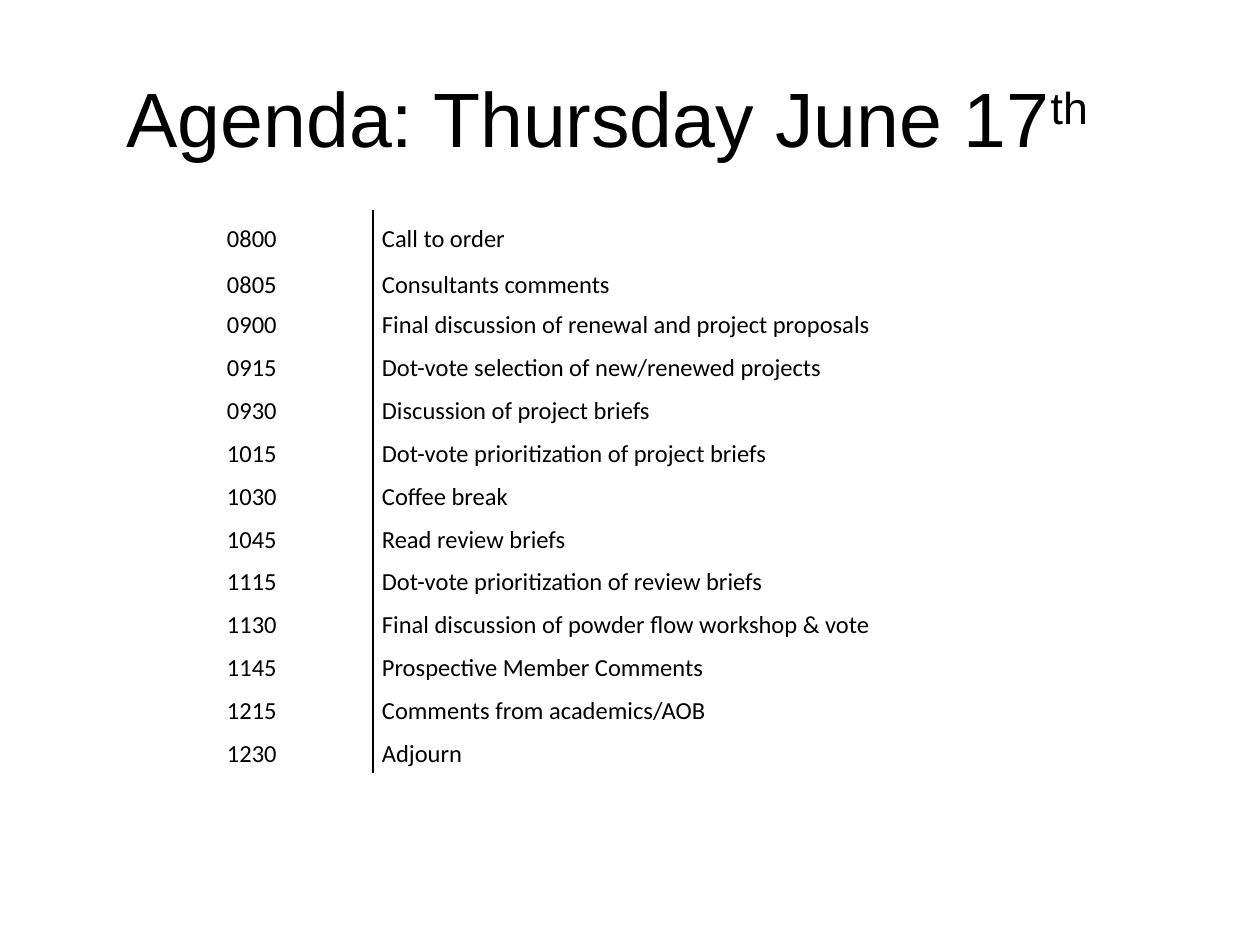
from typing import NamedTuple

from lxml.etree import SubElement
from pptx import Presentation
from pptx.dml.color import RGBColor
from pptx.enum.text import MSO_ANCHOR as Anchor, PP_ALIGN as Align
from pptx.oxml import parse_xml
from pptx.oxml.ns import nsdecls, qn
from pptx.util import Emu, Pt

BLACK = RGBColor(0x00, 0x00, 0x00)
WHITE = RGBColor(0xFF, 0xFF, 0xFF)
PX_PER_INCH = 126
NO_STYLE_NO_GRID = "{2D5ABB26-0587-4C30-8999-92F81FD0307C}"


class Item(NamedTuple):
    time: str
    topic: str


class Column(NamedTuple):
    width: int
    indent: int
    border: str


AGENDA = [
    Item("0800", "Call to order"),
    Item("0805", "Consultants comments"),
    Item("0900", "Final discussion of renewal and project proposals"),
    Item("0915", "Dot-vote selection of new/renewed projects"),
    Item("0930", "Discussion of project briefs"),
    Item("1015", "Dot-vote prioritization of project briefs"),
    Item("1030", "Coffee break"),
    Item("1045", "Read review briefs"),
    Item("1115", "Dot-vote prioritization of review briefs"),
    Item("1130", "Final discussion of powder flow workshop & vote"),
    Item("1145", "Prospective Member Comments"),
    Item("1215", "Comments from academics/AOB"),
    Item("1230", "Adjourn"),
]
# The two columns share the divider between them
COLUMNS = [Column(226, 71, "a:lnR"), Column(771, 0, "a:lnL")]
TABLE_LEFT, TABLE_TOP, TABLE_HEIGHT = 147, 210, 563
FIRST_ROWS = [53, 39]


def px(length: float) -> Emu:
    return Emu(round(length * 914400 / PX_PER_INCH))


TITLE_BOX = {"left": px(63), "top": px(38), "width": px(1134), "height": px(158)}
TITLE_FRAME = {"word_wrap": True, "vertical_anchor": Anchor.MIDDLE,
               "margin_right": px(58)}
TITLE_FONT = {"name": "Arial", "size": Pt(44)}
CELL_FORMAT = {"vertical_anchor": Anchor.MIDDLE, "margin_left": px(9),
               "margin_right": px(9), "margin_top": 0, "margin_bottom": 0}
CELL_PARAGRAPH = {"alignment": Align.LEFT, "line_spacing": 1.15}
CELL_FONT = {"name": "Calibri", "size": Pt(14)}


def apply(target, values: dict) -> None:
    for name, value in values.items():
        setattr(target, name, value)


def add_run(paragraph, text: str, font: dict):
    run = paragraph.add_run()
    run.text = text
    apply(run.font, font)
    run.font.color.rgb = BLACK
    return run


def add_title(slide) -> None:
    title = slide.shapes.title
    apply(title, TITLE_BOX)
    apply(title.text_frame, TITLE_FRAME)
    heading = title.text_frame.paragraphs[0]
    heading.alignment = Align.CENTER
    add_run(heading, "Agenda: Thursday June 17", TITLE_FONT)
    ordinal = add_run(heading, "th", TITLE_FONT)
    ordinal._r.get_or_add_rPr().set("baseline", "30000")


def add_border(cell, side: str) -> None:
    line = parse_xml(f'<{side} {nsdecls("a")} w="{Pt(1)}"/>')
    fill = SubElement(line, qn("a:solidFill"))
    SubElement(fill, qn("a:srgbClr"), val=str(BLACK))
    cell._tc.get_or_add_tcPr().insert(0, line)


def fill_cell(cell, text: str, column: Column) -> None:
    apply(cell, CELL_FORMAT)
    cell.fill.background()
    add_border(cell, column.border)
    entry = cell.text_frame.paragraphs[0]
    apply(entry, CELL_PARAGRAPH)
    entry._p.get_or_add_pPr().set("marL", str(px(column.indent)))
    add_run(entry, text, CELL_FONT)


def add_agenda(slide) -> None:
    total_width = sum(column.width for column in COLUMNS)
    frame = slide.shapes.add_table(
        len(AGENDA), len(COLUMNS), px(TABLE_LEFT), px(TABLE_TOP),
        px(total_width), px(TABLE_HEIGHT))
    table = frame.table
    apply(table, {"first_row": False, "horz_banding": False})
    table._tbl.tblPr.find(qn("a:tableStyleId")).text = NO_STYLE_NO_GRID

    # Rows after the first two share the remaining height equally
    equal_rows = len(AGENDA) - len(FIRST_ROWS)
    equal_height = (TABLE_HEIGHT - sum(FIRST_ROWS)) / equal_rows
    for row, height in zip(table.rows, FIRST_ROWS + [equal_height] * equal_rows):
        row.height = px(height)

    for c, column in enumerate(COLUMNS):
        table.columns[c].width = px(column.width)
        for r, item in enumerate(AGENDA):
            fill_cell(table.cell(r, c), item[c], column)


def main() -> None:
    deck = Presentation()
    apply(deck, {"slide_width": px(1260), "slide_height": px(945)})
    slide = deck.slides.add_slide(deck.slide_layouts[5])
    slide.background.fill.solid()
    slide.background.fill.fore_color.rgb = WHITE
    add_title(slide)
    add_agenda(slide)
    deck.save("out.pptx")


if __name__ == "__main__":
    main()
